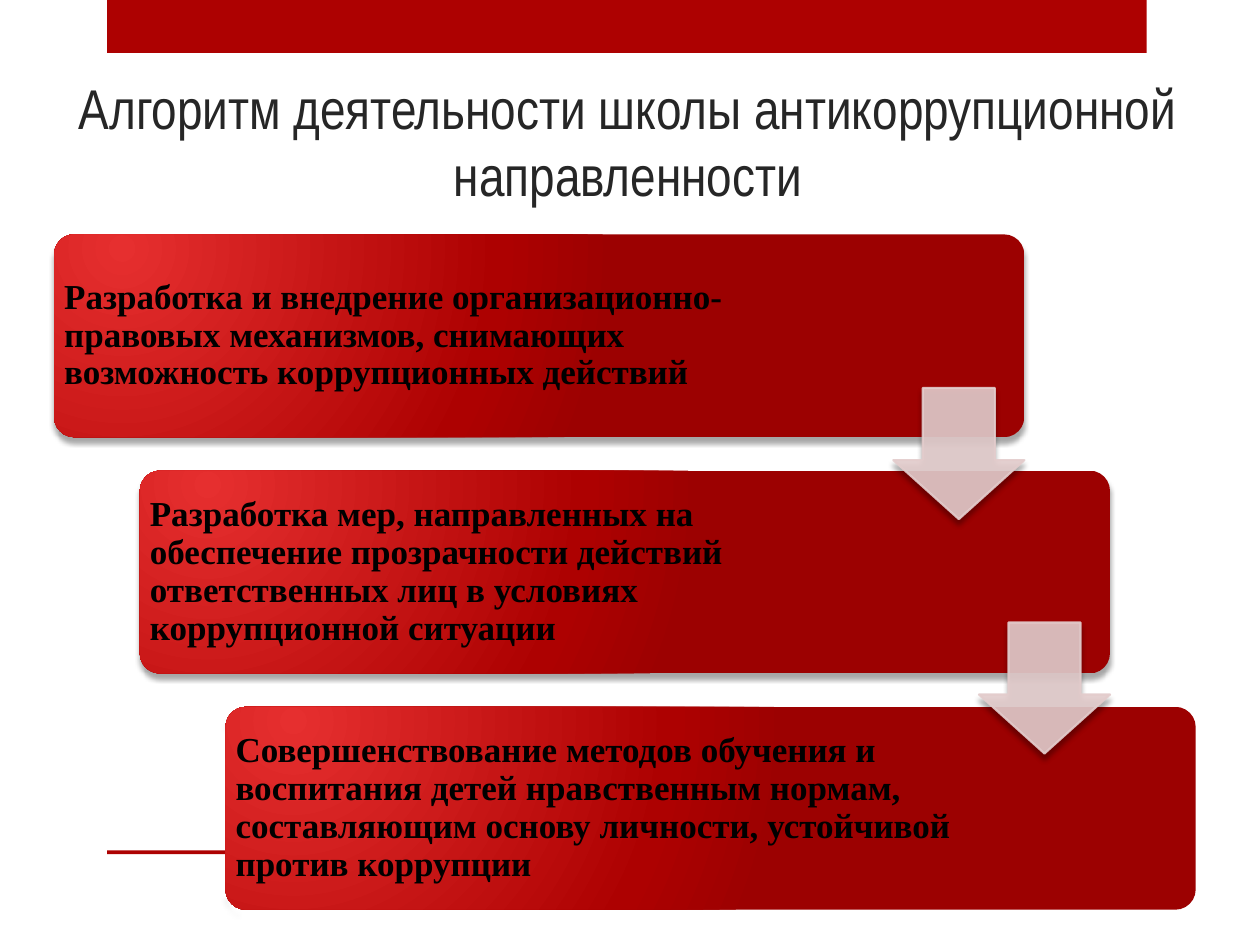
from pptx import Presentation
from pptx.dml.color import RGBColor
from pptx.enum.shapes import MSO_SHAPE as Shape
from pptx.enum.text import MSO_ANCHOR as Anchor, MSO_AUTO_SIZE as Fit, PP_ALIGN as Align
from pptx.oxml import parse_xml
from pptx.oxml.ns import nsdecls, qn
from pptx.util import Inches, Pt

HEX = {"red": "AD0101", "light": "E62F2F", "dark": "9C0101",
       "arrow": "E3CCCC", "title": "262626", "text": "000000"}
TITLE = "Алгоритм деятельности школы антикоррупционной направленности"
STEPS = [
    ("Разработка и внедрение организационно-правовых механизмов, "
     "снимающих возможность коррупционных действий", 6.06),
    ("Разработка мер, направленных на обеспечение прозрачности действий "
     "ответственных лиц в условиях коррупционной ситуации", 5.97),
    ("Совершенствование методов обучения и воспитания детей нравственным "
     "нормам, составляющим основу личности, устойчивой против коррупции", 5.97),
]
LEFT, TOP, WIDE, HIGH = 0.43, 1.86, 7.7, 1.61
SHIFT, DROP = 0.68, 1.875
ARROW, ARROW_TOP, ARROW_DROP = 1.04, 3.08, 1.86


def color(name):
    return RGBColor.from_string(HEX[name])


def style(item, values):
    for key, value in values.items():
        setattr(item, key, value)


def add_shape(slide, kind, box, fill, adjust=()):
    shape = slide.shapes.add_shape(kind, *map(Inches, box))
    for i, value in enumerate(adjust):
        shape.adjustments[i] = value
    shape.fill.solid()
    shape.fill.fore_color.rgb = color(fill)
    shape.line.fill.background()
    shape.shadow.inherit = False
    return shape


def add_shadow(shape):
    effects = shape._element.spPr.find(qn("a:effectLst"))
    effects.append(parse_xml(
        f'<a:outerShdw {nsdecls("a")} blurRad="{Pt(3)}" dist="{Pt(3)}" '
        'dir="5400000" rotWithShape="0"><a:srgbClr val="000000">'
        '<a:alpha val="35000"/></a:srgbClr></a:outerShdw>'))


def add_glow(shape):
    """Swap the plain fill for a gradient that spreads from the top left."""
    stops = "".join(
        f'<a:gs pos="{pos * 1000}"><a:srgbClr val="{HEX[name]}"/></a:gs>'
        for pos, name in ((0, "light"), (76, "red"), (100, "dark")))
    props = shape._element.spPr
    props.replace(props.find(qn("a:solidFill")), parse_xml(
        f'<a:gradFill {nsdecls("a")} rotWithShape="1"><a:gsLst>{stops}</a:gsLst>'
        '<a:path path="circle"><a:fillToRect l="15000" t="15000" '
        'r="100000" b="100000"/></a:path></a:gradFill>'))


def add_step(slide, index, text, width):
    x, y = LEFT + index * SHIFT, TOP + index * DROP
    panel = add_shape(slide, Shape.ROUNDED_RECTANGLE, (x, y, WIDE, HIGH), "red", [0.1])
    add_glow(panel)
    add_shadow(panel)

    label = slide.shapes.add_textbox(*map(Inches, (x, y, width, HIGH)))
    frame = label.text_frame
    style(frame, {"word_wrap": True, "vertical_anchor": Anchor.MIDDLE})
    style(frame, {f"margin_{side}": Inches(0.08)
                  for side in ("left", "top", "right", "bottom")})
    para = frame.paragraphs[0]
    para.line_spacing = 0.9
    run = para.add_run()
    run.text = text
    style(run.font, {"name": "Times New Roman", "size": Pt(20), "bold": True})
    run.font.color.rgb = color("text")


def add_arrow(slide, index):
    x = LEFT + WIDE - ARROW + index * SHIFT
    y = ARROW_TOP + index * ARROW_DROP
    arrow = add_shape(slide, Shape.DOWN_ARROW, (x, y, ARROW, ARROW), "arrow")
    arrow.adjustments[0], arrow.adjustments[1] = 0.55, 0.45
    arrow.line.color.rgb = color("arrow")
    arrow.line.width = Pt(1.25)
    # Fill and outline share the same transparency
    for tone in arrow._element.spPr.iter(qn("a:srgbClr")):
        tone.append(parse_xml(f'<a:alpha {nsdecls("a")} val="90000"/>'))
    add_shadow(arrow)


def set_title(slide):
    title = slide.shapes.title
    style(title, {"left": Inches(0.51), "top": Inches(0.6),
                  "width": Inches(8.95), "height": Inches(1.1)})
    frame = title.text_frame
    frame.text = TITLE
    style(frame, {"word_wrap": True, "auto_size": Fit.NONE,
                  "vertical_anchor": Anchor.BOTTOM})
    para = frame.paragraphs[0]
    para.alignment = Align.CENTER
    font = para.runs[0].font
    style(font, {"name": "Arial Narrow", "size": Pt(32), "bold": False})
    font.color.rgb = color("title")


def main():
    deck = Presentation()
    deck.slide_width, deck.slide_height = Inches(10), Inches(7.5)
    slide = deck.slides.add_slide(deck.slide_layouts[5])

    # Top band and bottom rule
    for top, height in ((0, 0.42), (6.75, 0.03)):
        add_shape(slide, Shape.RECTANGLE, (0.85, top, 8.25, height), "red")
    set_title(slide)

    # Staircase of steps, then the arrows over it
    for index, (text, width) in enumerate(STEPS):
        add_step(slide, index, text, width)
    for index in range(len(STEPS) - 1):
        add_arrow(slide, index)

    deck.save("out.pptx")


if __name__ == "__main__":
    main()
